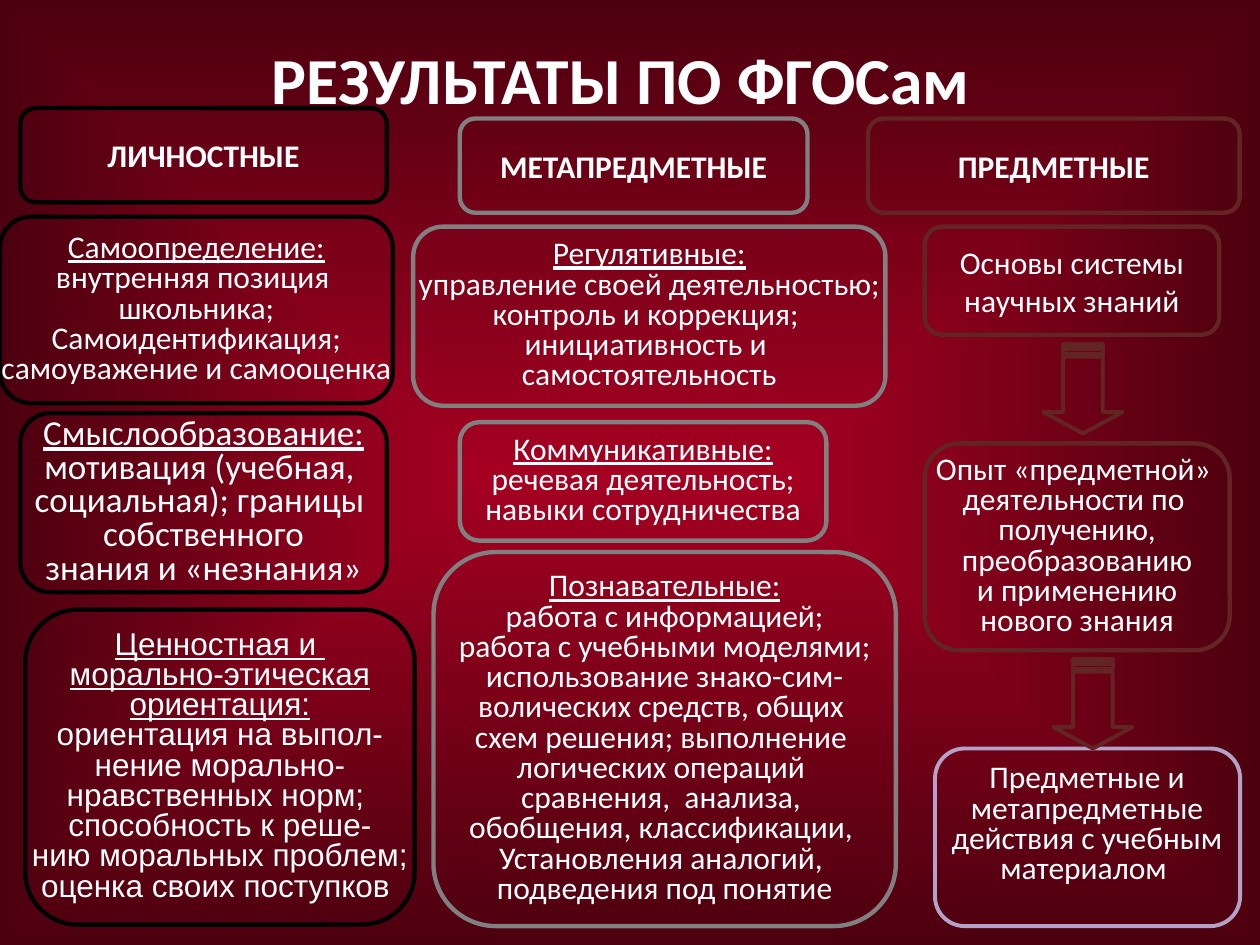
from dataclasses import dataclass

from lxml import etree
from pptx import Presentation
from pptx.dml.color import RGBColor
from pptx.enum.shapes import MSO_SHAPE
from pptx.enum.text import MSO_ANCHOR, PP_ALIGN
from pptx.oxml.ns import qn
from pptx.util import Cm, Pt

ROUND = MSO_SHAPE.ROUNDED_RECTANGLE
ARROW = MSO_SHAPE.STRIPED_RIGHT_ARROW
MIDDLE, TOP = MSO_ANCHOR.MIDDLE, MSO_ANCHOR.TOP
CENTER = PP_ALIGN.CENTER


@dataclass(frozen=True)
class Theme:
    glow: str = "A50021"
    edge: str = "4C000F"
    text: str = "FFFFFF"
    black: str = "000000"
    gray: str = "808080"
    brown: str = "632523"
    lilac: str = "B3A2C7"
    font: str = "Calibri"
    alt: str = "Arial"
    title: float = 37.5
    large: float = 20
    body: float = 18
    thick: float = 2.5
    thin: float = 2.25


THEME = Theme()

HEADS = [
    ((0.41, 2.18, 7.39, 1.9), THEME.black, "ЛИЧНОСТНЫЕ"),
    ((9.27, 2.39, 7.01, 1.9), THEME.gray, "МЕТАПРЕДМЕТНЫЕ"),
    ((17.5, 2.39, 7.49, 1.9), THEME.brown, "ПРЕДМЕТНЫЕ"),
]

CARDS = [
    ((0, 4.37, 7.92, 3.76), THEME.black, 1, {}, [
        "Самоопределение:", "внутренняя позиция ", "школьника;",
        "Самоидентификация;", "самоуважение и самооценка"]),
    ((0.41, 8.33, 7.39, 3.61), THEME.black, 1, {"size": THEME.large}, [
        "Смыслообразование:", "мотивация (учебная, ", "социальная); границы ",
        "собственного", "знания и «незнания»"]),
    ((0.51, 12.29, 7.85, 6.35), THEME.black, 3, {"name": THEME.alt}, [
        "Ценностная и ", "морально-этическая", "ориентация:",
        "ориентация на выпол-", "нение морально-", "нравственных норм; ",
        "способность к реше-", "нию моральных проблем;",
        "оценка своих поступков "]),
    ((8.33, 4.57, 9.52, 3.61), THEME.gray, 1, {}, [
        "Регулятивные:", "управление своей деятельностью;",
        "контроль и коррекция; ", "инициативность и ", "самостоятельность"]),
    ((9.27, 8.51, 7.39, 2.39), THEME.gray, 1, {}, [
        "Коммуникативные:", "речевая деятельность;", "навыки сотрудничества"]),
    ((8.74, 11.13, 9.32, 7.54), THEME.gray, 1, {}, [
        "Познавательные:", "работа с информацией;",
        "работа с учебными моделями;", "использование знако-сим-",
        "волических средств, общих ", "схем решения; выполнение ",
        "логических операций ", "сравнения,  анализа, ",
        "обобщения, классификации, ", "Установления аналогий, ",
        "подведения под понятие"]),
    ((18.64, 4.57, 5.94, 2.18), THEME.brown, 0, {"space": 1}, [
        "Основы системы", "научных знаний"]),
    ((18.64, 8.94, 6.15, 4.17), THEME.brown, 0, {}, [
        "Опыт «предметной» ", "деятельности по ", "получению,",
        "преобразованию", "и применению", "нового знания"]),
]

GOAL = "Предметные и метапредметные действия с учебным материалом "
ARROWS = [(20.93, 7.04), (21.13, 13.39)]


def paint(slide):
    fill = slide.background.fill
    fill.gradient()
    for stop, tint, pos in zip(fill.gradient_stops, (THEME.glow, THEME.edge), (0, 1)):
        stop.color.rgb = RGBColor.from_string(tint)
        stop.position = pos
    line = next(slide.element.iter(qn("a:lin")))
    grad = line.getparent()
    grad.remove(line)
    shade = etree.SubElement(grad, qn("a:path"), {"path": "shape"})
    sides = dict.fromkeys("ltrb", "50000")
    etree.SubElement(shade, qn("a:fillToRect"), sides)


def write(shape, lines, under=0, space=0.8, frame=None, **font):
    box = shape.text_frame
    look = {"word_wrap": False, "vertical_anchor": MIDDLE, **(frame or {})}
    for key, val in look.items():
        setattr(box, key, val)
    style = {"name": THEME.font, "size": THEME.body, "bold": False, **font}
    style["size"] = Pt(style["size"])
    for num, words in enumerate(lines):
        para = box.add_paragraph() if num else box.paragraphs[0]
        para.alignment = CENTER
        para.line_spacing = space
        run = para.add_run()
        run.text = words
        for key, val in {**style, "underline": num < under}.items():
            setattr(run.font, key, val)
        run.font.color.rgb = RGBColor.from_string(THEME.text)


def outline(slide, kind, area, tint, width):
    shape = slide.shapes.add_shape(kind, *map(Cm, area))
    shape.shadow.inherit = False
    shape.fill.background()
    shape.line.color.rgb = RGBColor.from_string(tint)
    shape.line.width = Pt(width)
    return shape


def label(slide, area, words, **look):
    box = slide.shapes.add_textbox(*map(Cm, area))
    frame = {"word_wrap": True, "vertical_anchor": TOP, **look.pop("frame", {})}
    write(box, [words], frame=frame, **look)


def arrow(slide, left, top):
    shape = outline(slide, ARROW, (left, top, 1.8, 1.6), THEME.brown, THEME.thin)
    shape.rotation = 90
    shape.adjustments[0] = 0.5
    shape.adjustments[1] = 0.27


def main():
    deck = Presentation()
    deck.slide_width, deck.slide_height = Cm(25.4), Cm(19.05)
    slide = deck.slides.add_slide(deck.slide_layouts[6])
    paint(slide)
    for area, tint, words in HEADS:
        card = outline(slide, ROUND, area, tint, THEME.thick)
        write(card, [words], space=1, bold=True)
    for area, tint, under, look, lines in CARDS:
        card = outline(slide, ROUND, area, tint, THEME.thick)
        write(card, lines, under, **look)
    label(slide, (18.64, 15.29, 6.55, 2.74), GOAL)
    outline(slide, ROUND, (18.85, 15.09, 6.15, 3.58), THEME.lilac, THEME.thin)
    for spot in ARROWS:
        arrow(slide, *spot)
    label(slide, (0.99, 0.58, 23.06, 1.63), "РЕЗУЛЬТАТЫ ПО ФГОСам", space=1,
          size=THEME.title, bold=True, frame={"margin_top": Cm(0.2)})
    deck.save("out.pptx")


if __name__ == "__main__":
    main()
